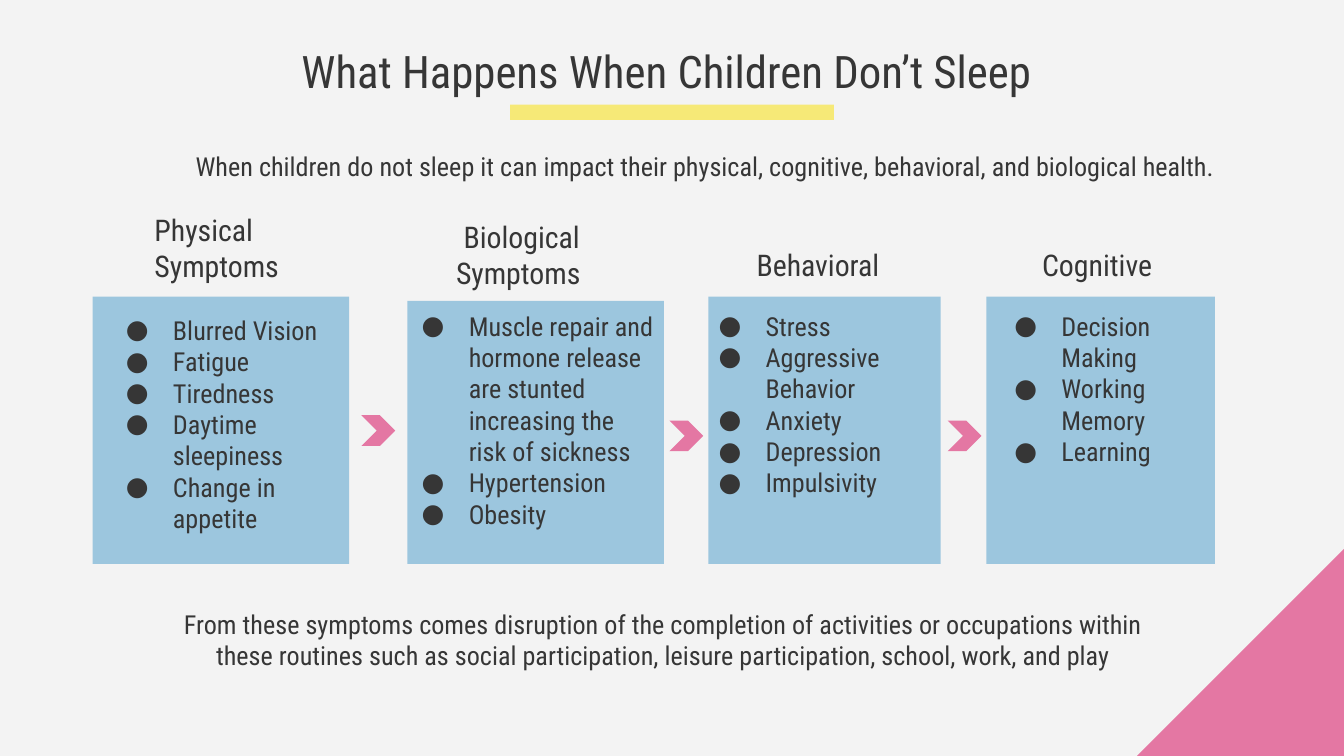
from lxml import etree
from pptx import Presentation
from pptx import util as u
from pptx.dml.color import RGBColor
from pptx.enum import shapes, text
from pptx.oxml import ns

Cm = u.Cm
FONT = "Roboto Condensed"
COLORS = {"paper": "F3F3F3", "ink": "363636", "pink": "E477A3",
          "yellow": "F6E977", "blue": "9CC6DE"}
LEFT, CENTER = text.PP_ALIGN.LEFT, text.PP_ALIGN.CENTER
CARD_BOTTOM = 10.66

TITLE = "What Happens When Children Don’t Sleep "
INTRO = ("When children do not sleep it can impact their physical, cognitive, "
         "behavioral, and biological health.")
SUMMARY = ("From these symptoms comes disruption of the completion of activities "
           "or occupations within these routines such as social participation, "
           "leisure participation, school, work, and play")

COLUMNS = [
    {"head": ["Physical Symptoms"], "head_at": (2.67, 3.76), "align": LEFT,
     "card": (1.75, 5.61, 4.85), "list_at": (1.75, 5.69, 4.85),
     "items": ["Blurred Vision", "Fatigue", "Tiredness", "Daytime sleepiness",
               "Change in appetite"]},
    {"head": ["Biological", "Symptoms "], "head_at": (7.7, 3.89), "align": CENTER,
     "card": (7.7, 5.69, 4.85), "list_at": (7.34, 5.61, 5.28),
     "items": ["Muscle repair and hormone release are stunted increasing "
               "the risk of sickness", "Hypertension", "Obesity"]},
    {"head": ["Behavioral"], "head_at": (14.05, 4.42), "align": LEFT,
     "card": (13.39, 5.61, 4.39), "list_at": (12.95, 5.61, 4.85),
     "items": ["Stress", "Aggressive Behavior", "Anxiety", "Depression",
               "Impulsivity"]},
    {"head": ["Cognitive "], "head_at": (18.64, 4.42), "align": CENTER,
     "card": (18.64, 5.61, 4.32), "list_at": (18.54, 5.61, 4.6),
     "items": ["Decision Making", "Working Memory", "Learning"]},
]
CHEVRONS = [(6.83, 7.85), (12.65, 7.95), (17.91, 7.95)]


def rgb(name):
    return RGBColor.from_string(COLORS[name])


def add_block(slide, kind, color, *box):
    s = slide.shapes.add_shape(kind, *map(Cm, box))
    s.shadow.inherit = False
    s.fill.solid()
    s.fill.fore_color.rgb = rgb(color)
    s.line.fill.background()
    return s


def set_frame(tf, lines):
    tf.text = "\n".join(lines)
    tf.word_wrap = True
    tf.auto_size = text.MSO_AUTO_SIZE.NONE
    tf.vertical_anchor = text.MSO_ANCHOR.TOP
    tf.margin_left = tf.margin_right = Cm(0.25)
    tf.margin_top = tf.margin_bottom = Cm(0.25)


def format_paragraph(p, size, align=LEFT, margin=0, indent=0):
    p.alignment = align
    pPr = p._p.get_or_add_pPr()
    pPr.set("marL", str(Cm(margin)))
    pPr.set("indent", str(Cm(indent)))
    for r in p.runs:
        r.font.size = u.Pt(size)
        r.font.name = FONT
        r.font.color.rgb = rgb("ink")


def add_bullet(p):
    pPr = p._p.get_or_add_pPr()
    color = etree.SubElement(pPr, ns.qn("a:buClr"))
    etree.SubElement(color, ns.qn("a:srgbClr"), val=COLORS["ink"])
    etree.SubElement(pPr, ns.qn("a:buFont"), typeface=FONT)
    etree.SubElement(pPr, ns.qn("a:buChar"), char="●")


def add_text(slide, box, lines, size, **layout):
    tf = slide.shapes.add_textbox(*map(Cm, box)).text_frame
    set_frame(tf, lines)
    for p in tf.paragraphs:
        format_paragraph(p, size, **layout)
    return tf


def set_title(slide):
    s = slide.shapes.title
    s.left, s.top, s.width, s.height = map(Cm, (0.86, 0.58, 23.67, 2.57))
    set_frame(s.text_frame, [TITLE, INTRO])
    heading, intro = s.text_frame.paragraphs
    format_paragraph(heading, 24, CENTER)
    format_paragraph(intro, 14, CENTER, margin=1.27)
    intro.space_before = u.Pt(28)


def add_column(slide, column):
    left, top, width = column["card"]
    add_block(slide, shapes.MSO_SHAPE.RECTANGLE, "blue",
              left, top, width, CARD_BOTTOM - top)
    add_text(slide, (*column["head_at"], 4.32, 1.27), column["head"], 16,
             align=column["align"])
    tf = add_text(slide, (*column["list_at"], 1.6), column["items"], 14,
                  margin=1.27, indent=-0.89)
    for p in tf.paragraphs:
        add_bullet(p)


def main():
    prs = Presentation()
    prs.slide_width, prs.slide_height = Cm(25.4), Cm(14.29)
    slide = prs.slides.add_slide(prs.slide_layouts[5])
    slide.background.fill.solid()
    slide.background.fill.fore_color.rgb = rgb("paper")

    corner = add_block(slide, shapes.MSO_SHAPE.RIGHT_TRIANGLE, "pink",
                       21.49, 10.38, 3.91, 3.91)
    corner._element.spPr.xfrm.set("flipH", "1")
    add_block(slide, shapes.MSO_SHAPE.RECTANGLE, "yellow", 9.64, 1.98, 6.12, 0.29)
    set_title(slide)
    for column in COLUMNS:
        add_column(slide, column)
    for left, top in CHEVRONS:
        add_block(slide, shapes.MSO_SHAPE.CHEVRON, "pink", left, top, 0.64, 0.58)
    add_text(slide, (1.88, 11.25, 20.04, 1.6), [SUMMARY], 14,
             align=CENTER, margin=1.27)
    prs.save("out.pptx")


if __name__ == "__main__":
    main()
